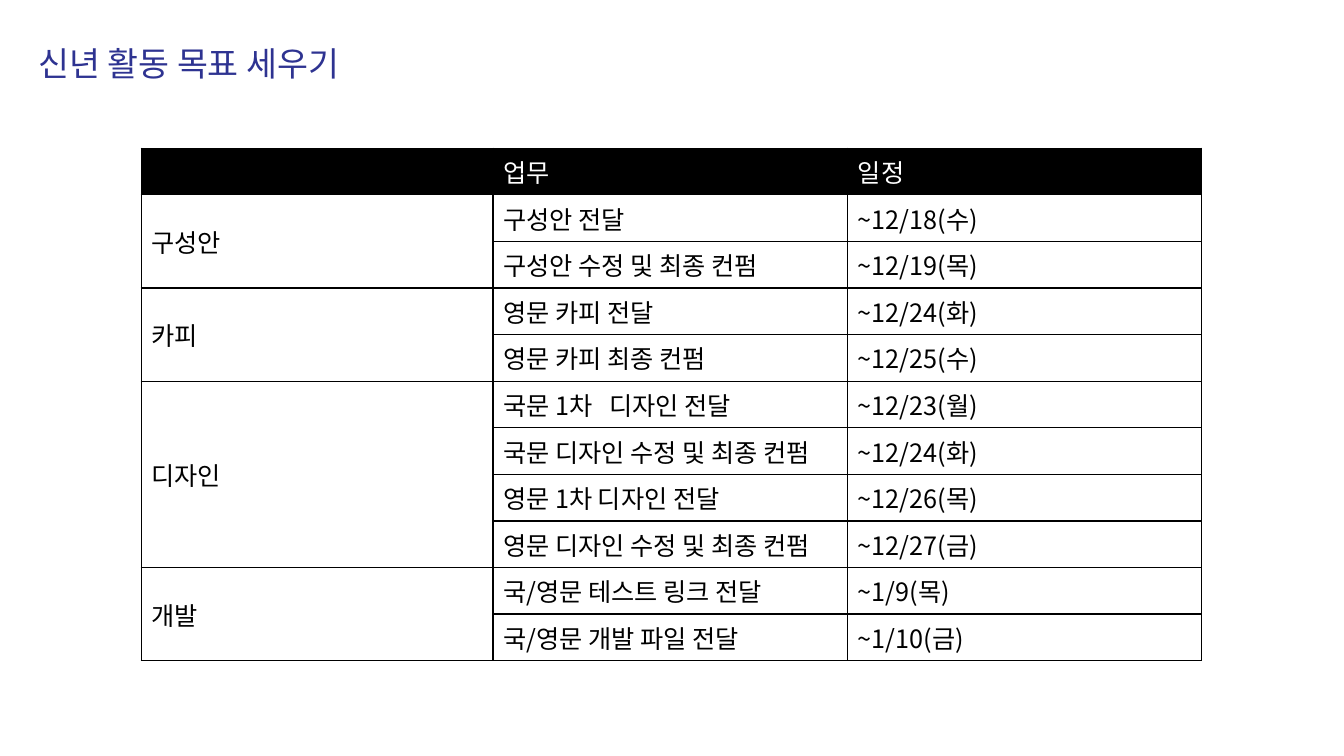
from lxml.etree import SubElement
from pptx import Presentation
from pptx.dml.color import RGBColor
from pptx.enum.text import MSO_ANCHOR, PP_ALIGN
from pptx.oxml.ns import qn
from pptx.util import Inches, Pt

FONT = "Noto Sans CJK KR"
NAVY = RGBColor(0x2E, 0x33, 0x91)
BLACK = RGBColor(0, 0, 0)
WHITE = RGBColor(255, 255, 255)

# Content: each stage with its tasks and due dates
TITLE = "신년 활동 목표 세우기"
HEADERS = ["", "업무", "일정"]
STAGES = [
    ("구성안", [("구성안 전달", "~12/18(수)"),
             ("구성안 수정 및 최종 컨펌", "~12/19(목)")]),
    ("카피", [("영문 카피 전달", "~12/24(화)"),
            ("영문 카피 최종 컨펌", "~12/25(수)")]),
    ("디자인", [("국문 1차   디자인 전달", "~12/23(월)"),
             ("국문 디자인 수정 및 최종 컨펌", "~12/24(화)"),
             ("영문 1차 디자인 전달", "~12/26(목)"),
             ("영문 디자인 수정 및 최종 컨펌", "~12/27(금)")]),
    ("개발", [("국/영문 테스트 링크 전달", "~1/9(목)"),
            ("국/영문 개발 파일 전달", "~1/10(금)")]),
]
COLUMN_WIDTHS = [3.49, 3.52, 3.51]
ROW_HEIGHT = 0.46


def style_text(paragraph, size, color):
    font = paragraph.font
    font.size = Pt(size)
    font.color.rgb = color
    font.name = FONT
    # Korean glyphs take the East Asian typeface
    SubElement(paragraph._p.pPr.find(qn("a:defRPr")), qn("a:ea"), typeface=FONT)


def add_borders(cell):
    properties = cell._tc.get_or_add_tcPr()
    for position, side in enumerate(("a:lnL", "a:lnR", "a:lnT", "a:lnB")):
        line = SubElement(properties, qn(side), w=str(Pt(1)))
        fill = SubElement(line, qn("a:solidFill"))
        SubElement(fill, qn("a:srgbClr"), val=str(BLACK))
        properties.insert(position, line)


def style_cell(cell, background, color):
    cell.fill.solid()
    cell.fill.fore_color.rgb = background
    cell.vertical_anchor = MSO_ANCHOR.MIDDLE
    style_text(cell.text_frame.paragraphs[0], 18, color)
    add_borders(cell)


def main():
    prs = Presentation()
    prs.slide_width, prs.slide_height = Inches(13.33), Inches(7.5)
    slide = prs.slides.add_slide(prs.slide_layouts[5])

    # Title
    title = slide.shapes.title
    title.left, title.top = Inches(0.28), Inches(0.47)
    title.width, title.height = Inches(7.29), Inches(0.57)
    title.text_frame.text = TITLE
    title.text_frame.vertical_anchor = MSO_ANCHOR.TOP
    title.text_frame.margin_top = 0
    heading = title.text_frame.paragraphs[0]
    heading.alignment = PP_ALIGN.LEFT
    heading.line_spacing = 0.9
    style_text(heading, 24, NAVY)

    # Schedule table
    row_count = 1 + sum(len(tasks) for _, tasks in STAGES)
    schedule = slide.shapes.add_table(
        row_count, len(HEADERS), Inches(1.4), Inches(1.47),
        Inches(sum(COLUMN_WIDTHS)), Inches(ROW_HEIGHT * row_count)).table
    for column, width in zip(schedule.columns, COLUMN_WIDTHS):
        column.width = Inches(width)

    for column, header in enumerate(HEADERS):
        schedule.cell(0, column).text = header

    # Stage names span the rows of their tasks
    row = 1
    for stage, tasks in STAGES:
        stage_cell = schedule.cell(row, 0)
        stage_cell.merge(schedule.cell(row + len(tasks) - 1, 0))
        stage_cell.text = stage
        for task, due in tasks:
            schedule.cell(row, 1).text = task
            schedule.cell(row, 2).text = due
            row += 1

    for row, table_row in enumerate(schedule.rows):
        for cell in table_row.cells:
            style_cell(cell, *((BLACK, WHITE) if row == 0 else (WHITE, BLACK)))

    prs.save("out.pptx")


if __name__ == "__main__":
    main()
